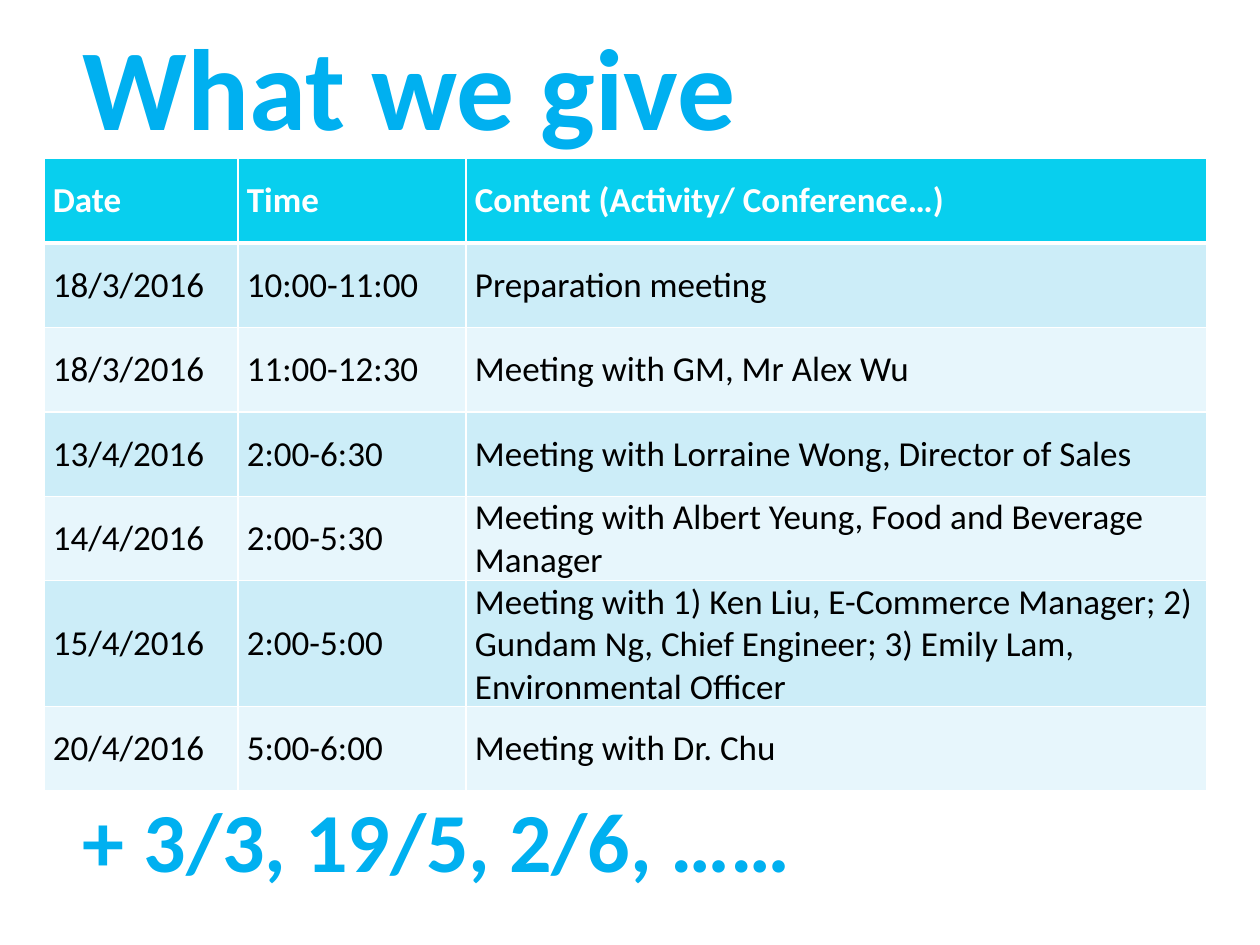
"""Build the "What we give" slide: a title, a meeting schedule and further dates."""
from dataclasses import dataclass

from lxml import etree
from pptx import Presentation
from pptx.dml.color import RGBColor
from pptx.enum.text import MSO_ANCHOR
from pptx.oxml.ns import qn
from pptx.util import Inches, Pt

MIDDLE, TOP = MSO_ANCHOR.MIDDLE, MSO_ANCHOR.TOP

HEADING = "What we give"
MORE_DATES = "+ 3/3, 19/5, 2/6, ……"
SCHEDULE = [
    ("Date", "Time", "Content (Activity/ Conference…)"),
    ("18/3/2016", "10:00-11:00", "Preparation meeting"),
    ("18/3/2016", "11:00-12:30", "Meeting with GM, Mr Alex Wu"),
    ("13/4/2016", "2:00-6:30", "Meeting with Lorraine Wong, Director of Sales"),
    ("14/4/2016", "2:00-5:30", "Meeting with Albert Yeung, Food and Beverage Manager"),
    ("15/4/2016", "2:00-5:00",
     "Meeting with 1) Ken Liu, E-Commerce Manager; 2) Gundam Ng, Chief Engineer; "
     "3) Emily Lam, Environmental Officer"),
    ("20/4/2016", "5:00-6:00", "Meeting with Dr. Chu"),
]


@dataclass(frozen=True)
class Theme:
    font: str = "Calibri"
    accent: str = "00B0F0"
    header: str = "08CFEE"
    bands: tuple = ("CCEDF8", "E7F6FC")
    ink: str = "000000"
    white: str = "FFFFFF"
    heading_size: int = 66
    dates_size: int = 48
    table_size: int = 20
    rule: int = 1
    header_rule: int = 3


THEME = Theme()
WIDTH, HEIGHT = 10, 7.5
BANNER_LEFT, BANNER_WIDTH, BANNER_HEIGHT = 0.56, 0.9 * WIDTH, 1.16
HEADING_TOP, DATES_TOP = 0.07, 6.21
TABLE_LEFT, TABLE_TOP = 0.35, 1.26
COLUMNS = (1.54, 1.81, 5.88)
ROW_HEIGHT, TALL_ROW_HEIGHT, TALL_ROW = 0.67, 0.94, 5
CELL_INSET = 0.07


def write(frame, text, *, size, color, bold=False, anchor=TOP):
    frame.word_wrap = True
    frame.vertical_anchor = anchor
    run = frame.paragraphs[0].add_run()
    run.text = text
    run.font.name = THEME.font
    run.font.size = Pt(size)
    run.font.bold = bold
    run.font.color.rgb = RGBColor.from_string(color)


def add_banner(slide, text, top, size):
    banner = slide.shapes.add_textbox(
        Inches(BANNER_LEFT), Inches(top), Inches(BANNER_WIDTH), Inches(BANNER_HEIGHT))
    write(banner.text_frame, text, size=size, color=THEME.accent, bold=True)


def set_borders(cell, **widths):
    properties = cell._tc.get_or_add_tcPr()
    for side in "LRTB":
        width = widths.get(side, THEME.rule)
        line = etree.SubElement(properties, qn(f"a:ln{side}"), w=str(Pt(width)))
        fill = etree.SubElement(line, qn("a:solidFill"))
        etree.SubElement(fill, qn("a:srgbClr"), val=THEME.white)


def add_schedule(slide):
    heights = [TALL_ROW_HEIGHT if row == TALL_ROW else ROW_HEIGHT
               for row in range(len(SCHEDULE))]
    table = slide.shapes.add_table(
        len(SCHEDULE), len(COLUMNS), Inches(TABLE_LEFT), Inches(TABLE_TOP),
        Inches(sum(COLUMNS)), Inches(sum(heights))).table
    for column, width in zip(table.columns, COLUMNS):
        column.width = Inches(width)
    for row, (entries, height) in enumerate(zip(SCHEDULE, heights)):
        table.rows[row].height = Inches(height)
        is_header = row == 0
        fill = THEME.header if is_header else THEME.bands[(row - 1) % 2]
        edges = {0: {"B": THEME.header_rule}, 1: {"T": THEME.header_rule}}.get(row, {})
        for column, entry in enumerate(entries):
            cell = table.cell(row, column)
            cell.margin_left = cell.margin_right = Inches(CELL_INSET)
            cell.margin_top = cell.margin_bottom = 0
            cell.vertical_anchor = MIDDLE
            set_borders(cell, **edges)
            cell.fill.solid()
            cell.fill.fore_color.rgb = RGBColor.from_string(fill)
            write(cell.text_frame, entry, size=THEME.table_size, bold=is_header,
                  color=THEME.white if is_header else THEME.ink, anchor=MIDDLE)


def main():
    deck = Presentation()
    deck.slide_width, deck.slide_height = Inches(WIDTH), Inches(HEIGHT)
    slide = deck.slides.add_slide(deck.slide_layouts[6])
    add_banner(slide, HEADING, HEADING_TOP, THEME.heading_size)
    add_schedule(slide)
    add_banner(slide, MORE_DATES, DATES_TOP, THEME.dates_size)
    deck.save("out.pptx")


if __name__ == "__main__":
    main()
